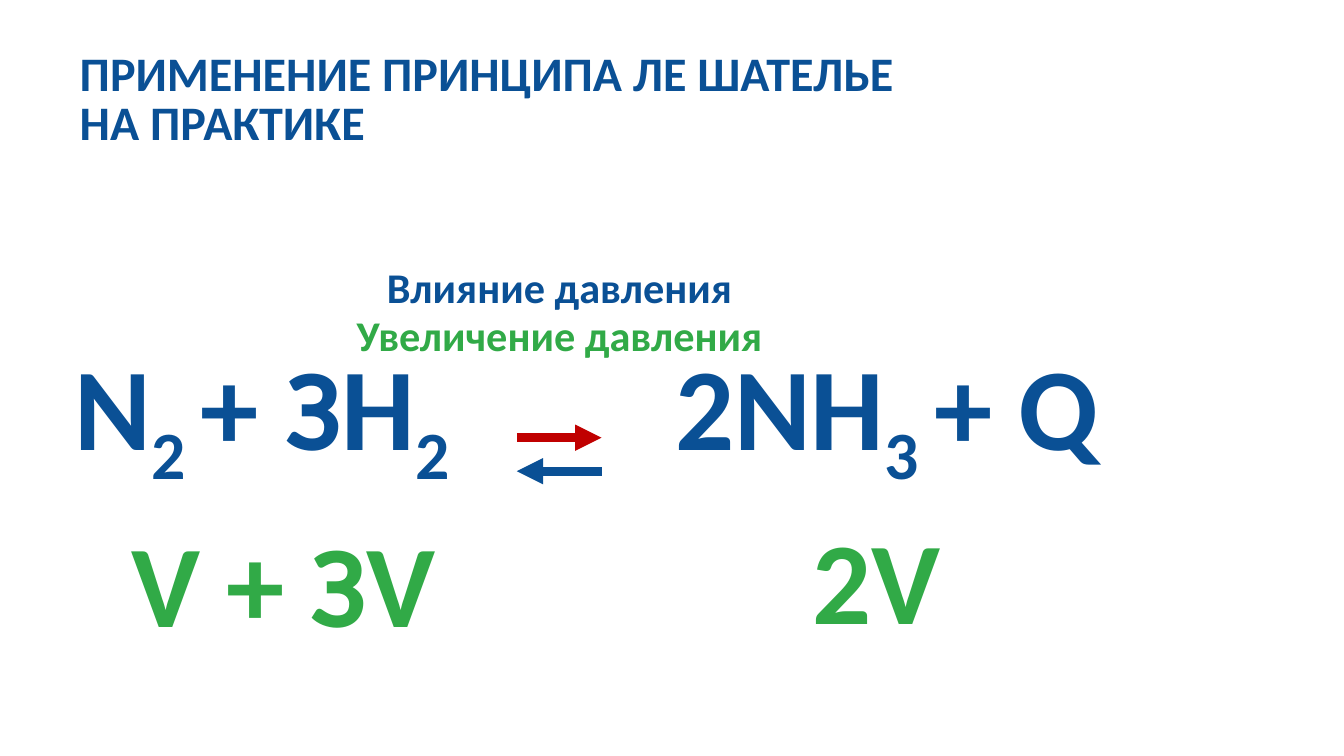
from pptx import Presentation
from pptx.dml.color import RGBColor
from pptx.enum.shapes import MSO_CONNECTOR
from pptx.enum.text import MSO_AUTO_SIZE, PP_ALIGN
from pptx.oxml.ns import qn
from pptx.util import Cm, Pt
from lxml.etree import SubElement

COLORS = {"blue": "0A5095", "green": "31AA47", "red": "C00000"}
FONT = "Calibri"
LINE_PITCH = Pt(33)
FORMULA_SIZE = 80
ARROW_LEFT, ARROW_RIGHT = 12.5, 14.55


def rgb(name):
    return RGBColor.from_string(COLORS[name])


def add_run(paragraph, text, *, size, color, subscript=False):
    run = paragraph.add_run()
    run.text = text
    run.font.name = FONT
    run.font.size = Pt(size)
    run.font.bold = True
    run.font.color.rgb = rgb(color)
    if subscript:
        run._r.get_or_add_rPr().set("baseline", "-25000")


def add_tab_stop(paragraph, position):
    tabs = SubElement(paragraph._p.get_or_add_pPr(), qn("a:tabLst"))
    SubElement(tabs, qn("a:tab"), pos=str(Cm(position)), algn="l")


def add_text(slide, lines, left, top, width, height, *, size,
             align=PP_ALIGN.LEFT, tab=None):
    """Add a text box; each line is a color and the pieces of its text,
    of which every second one is a subscript."""
    frame = slide.shapes.add_textbox(
        Cm(left), Cm(top), Cm(width), Cm(height)).text_frame
    frame.word_wrap = True
    frame.auto_size = MSO_AUTO_SIZE.SHAPE_TO_FIT_TEXT
    for index, (color, *pieces) in enumerate(lines):
        paragraph = frame.add_paragraph() if index else frame.paragraphs[0]
        paragraph.alignment = align
        paragraph.line_spacing = LINE_PITCH
        if tab:
            add_tab_stop(paragraph, tab)
        for position, text in enumerate(pieces):
            add_run(paragraph, text, size=size, color=color,
                    subscript=position % 2 == 1)


def add_arrow(slide, start, end, y, color):
    arrow = slide.shapes.add_connector(
        MSO_CONNECTOR.STRAIGHT, Cm(start), Cm(y), Cm(end), Cm(y))
    arrow.line.color.rgb = rgb(color)
    arrow.line.width = Pt(6)
    properties = arrow._element.spPr
    SubElement(properties.find(qn("a:ln")), qn("a:tailEnd"), type="triangle")
    SubElement(properties, qn("a:effectLst"))


def main():
    presentation = Presentation()
    presentation.slide_width = Cm(32.51)
    presentation.slide_height = Cm(18.29)
    slide = presentation.slides.add_slide(presentation.slide_layouts[6])

    add_text(slide, [("blue", "ПРИМЕНЕНИЕ ПРИНЦИПА ЛЕ ШАТЕЛЬЕ"),
                     ("blue", "НА ПРАКТИКЕ")],
             1.68, 1.17, 22, 2.62, size=33)
    add_text(slide, [("blue", "Влияние давления"),
                     ("green", "Увеличение давления")],
             7.54, 6.25, 12, 2.62, size=29, align=PP_ALIGN.CENTER)

    add_text(slide, [("blue", "N", "2 ", "+ ЗН", "2", "\t2NH", "3 ", "+ Q")],
             1.55, 10.64, 26.6, 1.42, size=FORMULA_SIZE, tab=14.53)
    add_text(slide, [("green", "V + ЗV")],
             2.92, 14.45, 11, 1.42, size=FORMULA_SIZE)
    add_text(slide, [("green", "2V")],
             19.41, 14.38, 4.27, 1.88, size=FORMULA_SIZE)

    add_arrow(slide, ARROW_LEFT, ARROW_RIGHT, 10.59, "red")
    add_arrow(slide, ARROW_RIGHT, ARROW_LEFT, 11.4, "blue")

    presentation.save("out.pptx")


if __name__ == "__main__":
    main()
